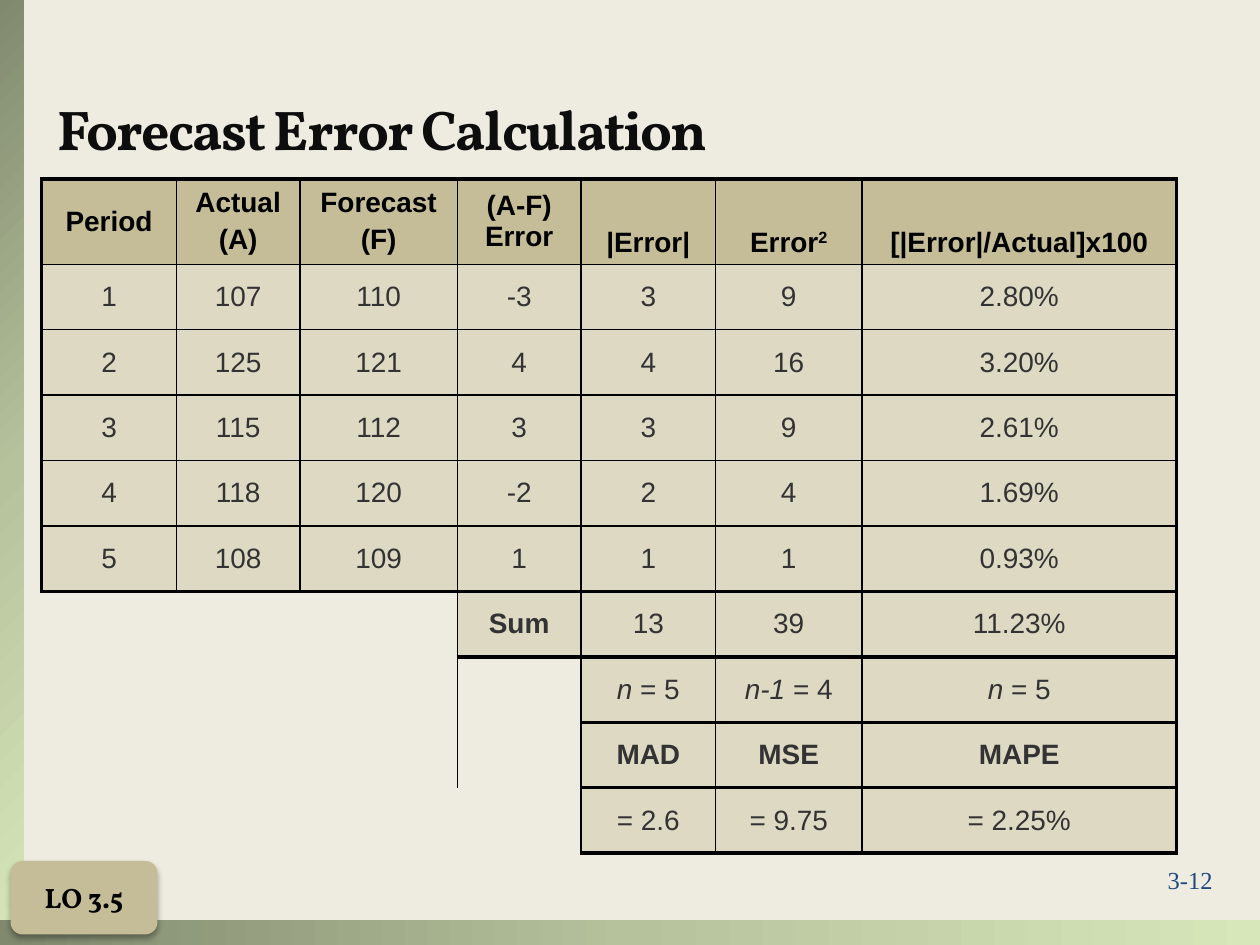
from lxml import etree
from pptx import Presentation
from pptx.dml.color import RGBColor
from pptx.enum import shapes, text
from pptx.oxml import ns, parse_xml
from pptx.util import Pt

CREAM = RGBColor(0xEE, 0xEC, 0xE1)
TAN = RGBColor(0xC4, 0xBD, 0x97)
SAND = RGBColor(0xDD, 0xD9, 0xC3)
BLACK = RGBColor(0, 0, 0)
INK = RGBColor(0x0D, 0x0D, 0x0D)
GRAY = RGBColor(0x33, 0x33, 0x33)
NAVY = RGBColor(0x1F, 0x49, 0x7D)
MOSS = RGBColor(0x80, 0x89, 0x6E)
SAGE = RGBColor(0xB6, 0xC2, 0x9C)
LIME = RGBColor(0xD8, 0xE7, 0xBA)
NS = ns.nsdecls("a")


def write(para, words, face, size, color, bold=False):
    run = para.add_run()
    run.text = words
    run.font.name = face
    run.font.size = Pt(size)
    run.font.bold = bold
    run.font.color.rgb = color
    return run


def shade(bar, kind):
    bar.shadow.inherit = False
    bar.line.fill.background()
    bar.fill.solid()
    stops = "".join(f'<a:gs pos="{pos}"><a:srgbClr val="{tone}"/></a:gs>'
                    for pos, tone in ((0, MOSS), (50000, SAGE), (100000, LIME)))
    grad = parse_xml(f'<a:gradFill {NS} rotWithShape="1"><a:gsLst>{stops}</a:gsLst>{kind}</a:gradFill>')
    old = bar.element.spPr.find(ns.qn("a:solidFill"))
    bar.element.spPr.replace(old, grad)


deck = Presentation()
deck.slide_width, deck.slide_height = Pt(720), Pt(540)
slide = deck.slides.add_slide(deck.slide_layouts[6])
slide.background.fill.solid()
slide.background.fill.fore_color.rgb = CREAM
RECT = shapes.MSO_SHAPE.RECTANGLE

side = slide.shapes.add_shape(RECT, Pt(-263.2), Pt(261.5), Pt(540), Pt(13.8))
side.rotation = 270
shade(side, '<a:path path="circle"><a:fillToRect r="100000" b="100000"/></a:path>')
base = slide.shapes.add_shape(RECT, 0, Pt(525.6), Pt(720), Pt(14.4))
shade(base, '<a:lin ang="0" scaled="0"/>')

num = slide.shapes.add_textbox(Pt(660.2), Pt(491), Pt(46.8), Pt(24.5))
num.text_frame.word_wrap = True
write(num.text_frame.paragraphs[0], "3-12", "Times New Roman", 14, NAVY)

rows = [
    ["Period", "Actual\n(A)", "Forecast\n(F)", "(A-F) Error", "|Error|", ("Error", "2"), "[|Error|/Actual]x100"],
    ["1", "107", "110", "-3", "3", "9", "2.80%"],
    ["2", "125", "121", "4", "4", "16", "3.20%"],
    ["3", "115", "112", "3", "3", "9", "2.61%"],
    ["4", "118", "120", "-2", "2", "4", "1.69%"],
    ["5", "108", "109", "1", "1", "1", "0.93%"],
    [None, None, None, "Sum", "13", "39", "11.23%"],
    [None, None, None, None, ("n ", "= 5"), ("n-1 ", "= 4"), ("n ", "= 5")],
    [None, None, None, None, "MAD", "MSE", "MAPE"],
    [None, None, None, None, "= 2.6", "= 9.75", "= 2.25%"],
]
wides = [77, 70.6, 90, 70.6, 77, 83.5, 180]
frame = slide.shapes.add_table(len(rows), len(wides), Pt(23.8), Pt(102.2), Pt(sum(wides)), Pt(380.6))
grid = frame.table
grid.first_row = grid.horz_banding = False
style = grid._tbl.tblPr.find(ns.qn("a:tableStyleId"))
style.text = "{2D5ABB26-0587-4C30-8999-92F81FD0307C}"
for col, wide in zip(grid.columns, wides):
    col.width = Pt(wide)
for r, row in enumerate(grid.rows):
    row.height = Pt(37.4 if r else 44)
for top, left, low, right in ((6, 0, 8, 2), (7, 3, 9, 3), (9, 0, 9, 2)):
    grid.cell(top, left).merge(grid.cell(low, right))

for r, row in enumerate(rows):
    for c, item in enumerate(row):
        cell = grid.cell(r, c)
        if item is None:
            cell.fill.background()
            continue
        cell.fill.solid()
        cell.fill.fore_color.rgb = SAND if r else TAN
        cell.margin_left = cell.margin_right = Pt(7.6)
        cell.margin_top = cell.margin_bottom = Pt(3.6)
        low = r == 0 and c > 3
        cell.vertical_anchor = text.MSO_ANCHOR.BOTTOM if low else text.MSO_ANCHOR.MIDDLE
        thick = {"L": c == 0, "R": c == 6, "T": r == 0 or r > 5, "B": r > 4}
        for k, (edge, heavy) in enumerate(thick.items()):
            line = parse_xml(f'<a:ln{edge} {NS} w="{Pt(2.25 if heavy else 1)}"><a:solidFill>'
                             f'<a:srgbClr val="{BLACK}"/></a:solidFill></a:ln{edge}>')
            cell._tc.tcPr.insert(k, line)
        parts = item if isinstance(item, tuple) else (item,)
        bold = r in (0, 8) or item == "Sum"
        para = cell.text_frame.paragraphs[0]
        para.alignment = text.PP_ALIGN.CENTER
        for i, part in enumerate(parts):
            for j, words in enumerate(part.split("\n")):
                if j:
                    para = cell.text_frame.add_paragraph()
                    para.alignment = text.PP_ALIGN.CENTER
                    para.space_before = Pt(3.2)
                run = write(para, words, "Arial", 16, GRAY if r else BLACK, bold)
                if r == 7 and i == 0:
                    run.font.italic = True
                if r == 0 and i == 1:
                    run.font._element.set("baseline", "30000")

title = slide.shapes.add_textbox(Pt(26), 0, Pt(648), Pt(95.8))
title.text_frame.word_wrap = True
title.text_frame.vertical_anchor = text.MSO_ANCHOR.BOTTOM
head = write(title.text_frame.paragraphs[0], "Forecast Error Calculation", "Vollkorn", 32, INK, True)
head.font._element.set("spc", "-100")

badge = slide.shapes.add_shape(shapes.MSO_SHAPE.ROUNDED_RECTANGLE, Pt(6), Pt(492), Pt(84), Pt(42))
badge.fill.solid()
badge.fill.fore_color.rgb = TAN
badge.line.fill.background()
badge.shadow.inherit = False
glow = etree.SubElement(badge.element.spPr.find(ns.qn("a:effectLst")), ns.qn("a:outerShdw"),
                        blurRad=str(Pt(3.5)), dist=str(Pt(2.2)), dir="5400000", rotWithShape="0")
tone = etree.SubElement(glow, ns.qn("a:srgbClr"), val=str(BLACK))
etree.SubElement(tone, ns.qn("a:alpha"), val="32000")
badge.text_frame.vertical_anchor = text.MSO_ANCHOR.MIDDLE
label = badge.text_frame.paragraphs[0]
label.alignment = text.PP_ALIGN.CENTER
write(label, "LO 3.5", "Vollkorn", 16, BLACK, True)

deck.save("out.pptx")
